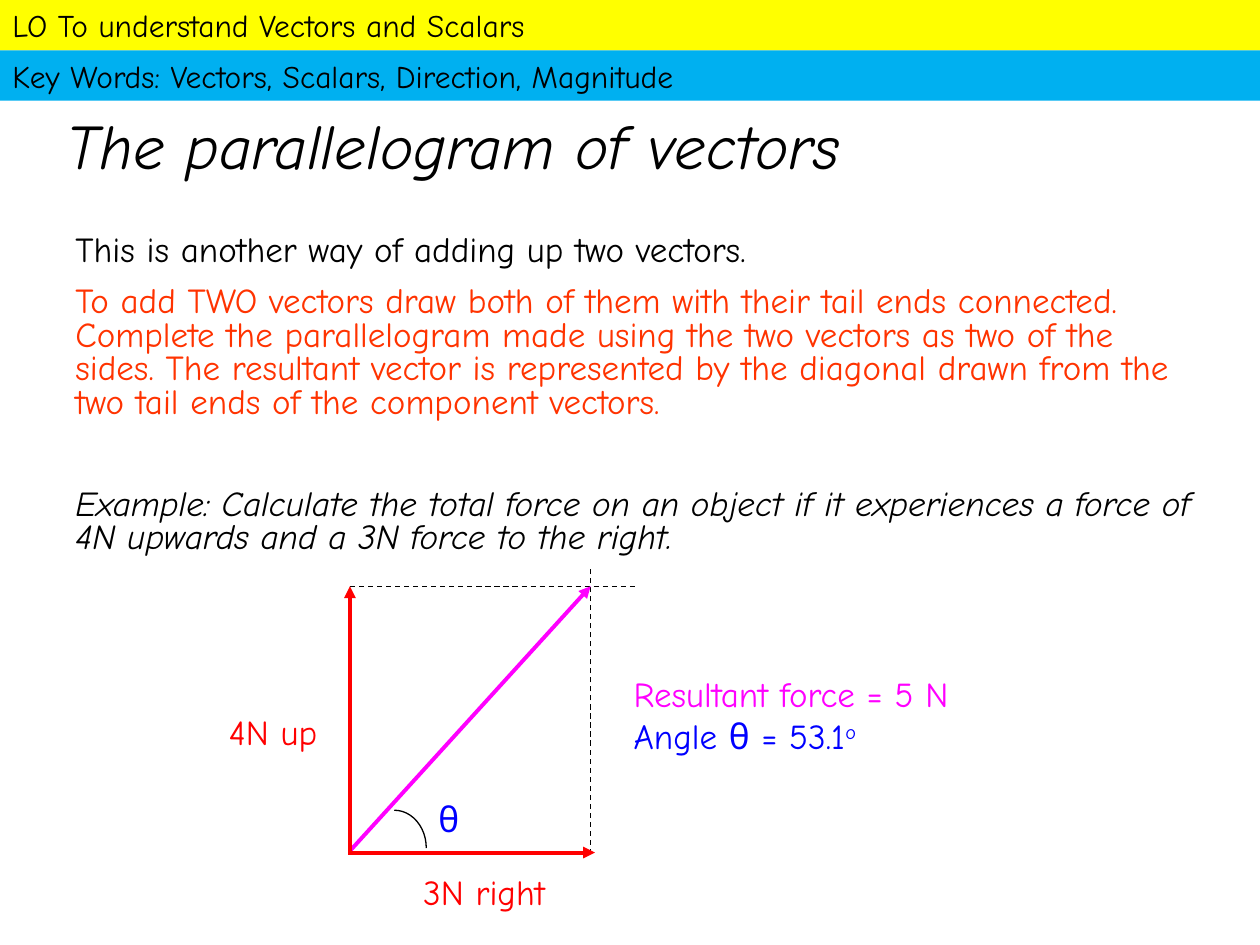
"""Build a slide explaining the parallelogram of vectors."""
from lxml import etree
from pptx import Presentation
from pptx import util as u
from pptx.dml.color import RGBColor
from pptx.enum import dml, shapes, text
from pptx.oxml.ns import qn

Pt = u.Pt
BLACK = RGBColor(0, 0, 0)
YELLOW = RGBColor(0xFF, 0xFF, 0)
SKY = RGBColor(0, 0xB0, 0xF0)
ORANGE = RGBColor(0xFF, 0x33, 0)
RED = RGBColor(0xFF, 0, 0)
MAGENTA = RGBColor(0xFF, 0, 0xFF)
BLUE = RGBColor(0, 0, 0xFF)


def add_run(p, words, color, size=20, italic=False):
    r = p.add_run()
    r.text = words
    r.font.name = "Comic Neue"
    r.font.size = Pt(size)
    r.font.italic = italic
    r.font.color.rgb = color
    return r


def add_box(x, y, w, h):
    tf = s.shapes.add_textbox(Pt(x), Pt(y), Pt(w), Pt(h)).text_frame
    tf.word_wrap = True
    return tf


prs = Presentation()
prs.slide_width, prs.slide_height = Pt(720), Pt(540)
s = prs.slides.add_slide(prs.slide_layouts[6])

banners = [
    ("LO To understand Vectors and Scalars", YELLOW),
    ("Key Words: Vectors, Scalars, Direction, Magnitude", SKY),
]
for i, (words, fill) in enumerate(banners):
    sp = s.shapes.add_shape(shapes.MSO_SHAPE.RECTANGLE, 0, Pt(28.8 * i), Pt(720), Pt(28.8))
    sp.shadow.inherit = False
    sp.fill.solid()
    sp.fill.fore_color.rgb = fill
    sp.line.fill.background()
    tf = sp.text_frame
    tf.vertical_anchor = text.MSO_ANCHOR.TOP
    tf.paragraphs[0].alignment = text.PP_ALIGN.LEFT
    add_run(tf.paragraphs[0], words, BLACK, 18)

tf = add_box(31, 54.7, 648.7, 60.5)
tf.vertical_anchor = text.MSO_ANCHOR.MIDDLE
tf.paragraphs[0].line_spacing = 0.9
add_run(tf.paragraphs[0], "The parallelogram of vectors", BLACK, 36, True)

body = [
    ("This is another way of adding up two vectors.", BLACK, False, 0),
    ("To add TWO vectors draw both of them with their tail ends connected. "
     "Complete the parallelogram made using the two vectors as two of the sides. "
     "The resultant vector is represented by the diagonal drawn from the two tail "
     "ends of the component vectors.", ORANGE, False, 10),
    ("Example: Calculate the total force on an object if it experiences a force of "
     "4N upwards and a 3N force to the right.", BLACK, True, 39),
]
tf = add_box(36, 131, 655.2, 192.2)
for i, (words, color, italic, before) in enumerate(body):
    p = tf.add_paragraph() if i else tf.paragraphs[0]
    p.line_spacing = 0.8
    if before:
        p.space_before = Pt(before)
    add_run(p, words, color, italic=italic)

lines = [
    (200, 335.3, 363, 335.3, BLACK, False),
    (337.5, 488, 337.5, 324.3, BLACK, False),
    (200.6, 485.6, 337.5, 335, MAGENTA, True),
    (200, 486, 200, 335, RED, True),
    (199, 487.2, 340, 487.2, RED, True),
]
for x1, y1, x2, y2, color, arrow in lines:
    sp = s.shapes.add_connector(shapes.MSO_CONNECTOR.STRAIGHT, Pt(x1), Pt(y1), Pt(x2), Pt(y2))
    sp.line.color.rgb = color
    sp.line.width = Pt(2.25 if arrow else 0.75)
    if arrow:
        etree.SubElement(sp.line._get_or_add_ln(), qn("a:tailEnd"), type="triangle")
    else:
        sp.line.dash_style = dml.MSO_LINE.DASH
    etree.SubElement(sp._element.spPr, qn("a:effectLst"))

sp = s.shapes.add_shape(shapes.MSO_SHAPE.ARC, Pt(207), Pt(463), Pt(36.6), Pt(43.2))
sp.shadow.inherit = False
sp.fill.background()
sp.line.color.rgb = BLACK
sp.line.width = Pt(0.75)

labels = [
    ("4N up", 123.8, 402.5, 83.5, 36.7, RED),
    ("3N right", 234.7, 494, 99.4, 36.7, RED),
    ("θ", 243.4, 452.2, 41.8, 34.6, BLUE),
]
for words, x, y, w, h, color in labels:
    add_run(add_box(x, y, w, h).paragraphs[0], words, color)

tf = add_box(355, 380.9, 199.4, 63.4)
add_run(tf.paragraphs[0], "Resultant force = 5 N", MAGENTA)
p = tf.add_paragraph()
add_run(p, "Angle θ = 53.1", BLUE)
r = add_run(p, "o", BLUE)
r.font._element.set("baseline", "30000")

prs.save("out.pptx")
